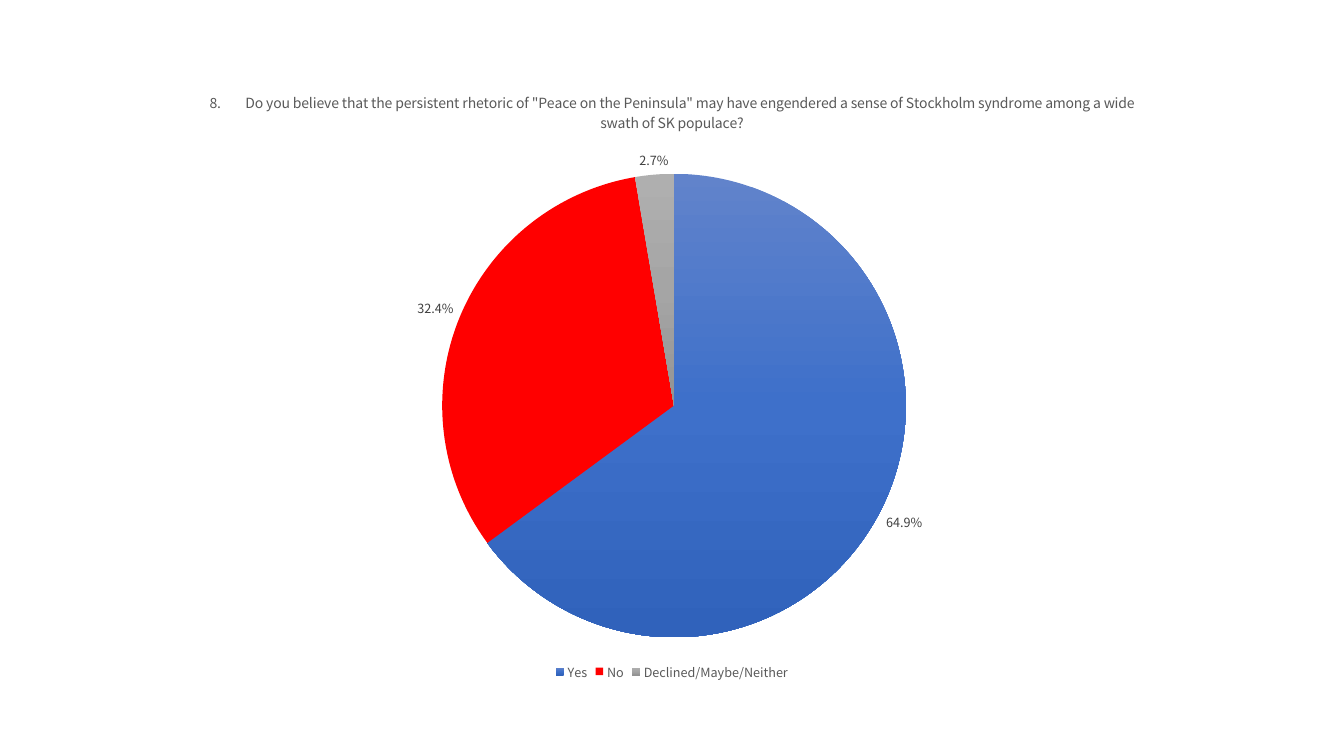
from copy import deepcopy

from pptx import Presentation
from pptx.chart.data import CategoryChartData
from pptx.dml.color import RGBColor
from pptx.enum.chart import XL_CHART_TYPE as CT, XL_LABEL_POSITION as LP, XL_LEGEND_POSITION as LG
from pptx.util import Inches, Pt

FONT = "Noto Sans CJK KR"
COLORS = {
    "base": "000000",
    "text": "595959",
    "label": "404040",
    "Yes": ["6183CB", "3E70CA", "3062BB"],
    "No": ["FF0000"],
    "Declined/Maybe/Neither": ["AFAFAF", "A5A5A5", "939393"],
}
QUESTION = ('8.    \u0020   Do you believe that the persistent rhetoric of "Peace on the Peninsula" '
            "may have engendered a sense of Stockholm syndrome among a wide swath of SK populace?")
ANSWERS = {"Yes": 0.649, "No": 0.324, "Declined/Maybe/Neither": 0.027}


def style_font(font, size, color):
    """Set the typeface, size and colour of a font."""
    font.name = FONT
    font.size = Pt(size)
    font.bold = False
    font.color.rgb = RGBColor.from_string(COLORS[color])


def fill_slice(fill, shades):
    """Fill a slice with one colour or with a top-down gradient of three."""
    if len(shades) == 1:
        fill.solid()
        fill.fore_color.rgb = RGBColor.from_string(shades[0])
        return
    fill.gradient()
    fill.gradient_angle = 270
    first = fill.gradient_stops[0]._gs
    first.addnext(deepcopy(first))
    for i, (stop, shade) in enumerate(zip(fill.gradient_stops, shades)):
        stop.position = i / 2
        stop.color.rgb = RGBColor.from_string(shade)


def add_answer_pie(s, x, y, w, h):
    """Draw the survey question and its answers as a pie chart in the given box."""
    data = CategoryChartData(number_format="0.0%")
    data.categories = list(ANSWERS)
    data.add_series(QUESTION, list(ANSWERS.values()))
    box = [Inches(v) for v in (x, y, w, h)]
    chart = s.shapes.add_chart(CT.PIE, *box, data).chart
    style_font(chart.font, 10, "base")

    chart.has_title = True
    tf = chart.chart_title.text_frame
    tf.text = QUESTION
    style_font(tf.paragraphs[0].runs[0].font, 10, "text")
    chart.chart_title.include_in_layout = False

    chart.has_legend = True
    chart.legend.position = LG.BOTTOM
    chart.legend.include_in_layout = False
    style_font(chart.legend.font, 9, "text")

    plot = chart.plots[0]
    plot.vary_by_categories = True
    for i, answer in enumerate(ANSWERS):
        fill_slice(plot.series[0].points[i].format.fill, COLORS[answer])

    labels = plot.series[0].data_labels
    labels.show_value = True
    labels.show_percentage = False
    labels.position = LP.OUTSIDE_END
    labels.number_format = "0.0%"
    labels.number_format_is_linked = False
    style_font(labels.font, 9, "label")


def main():
    """Build the slide and save it."""
    prs = Presentation()
    prs.slide_width, prs.slide_height = Inches(13.33), Inches(7.5)
    s = prs.slides.add_slide(prs.slide_layouts[6])
    add_answer_pie(s, 0.7, 0.7, 11.93, 6.09)
    prs.save("out.pptx")


if __name__ == "__main__":
    main()
